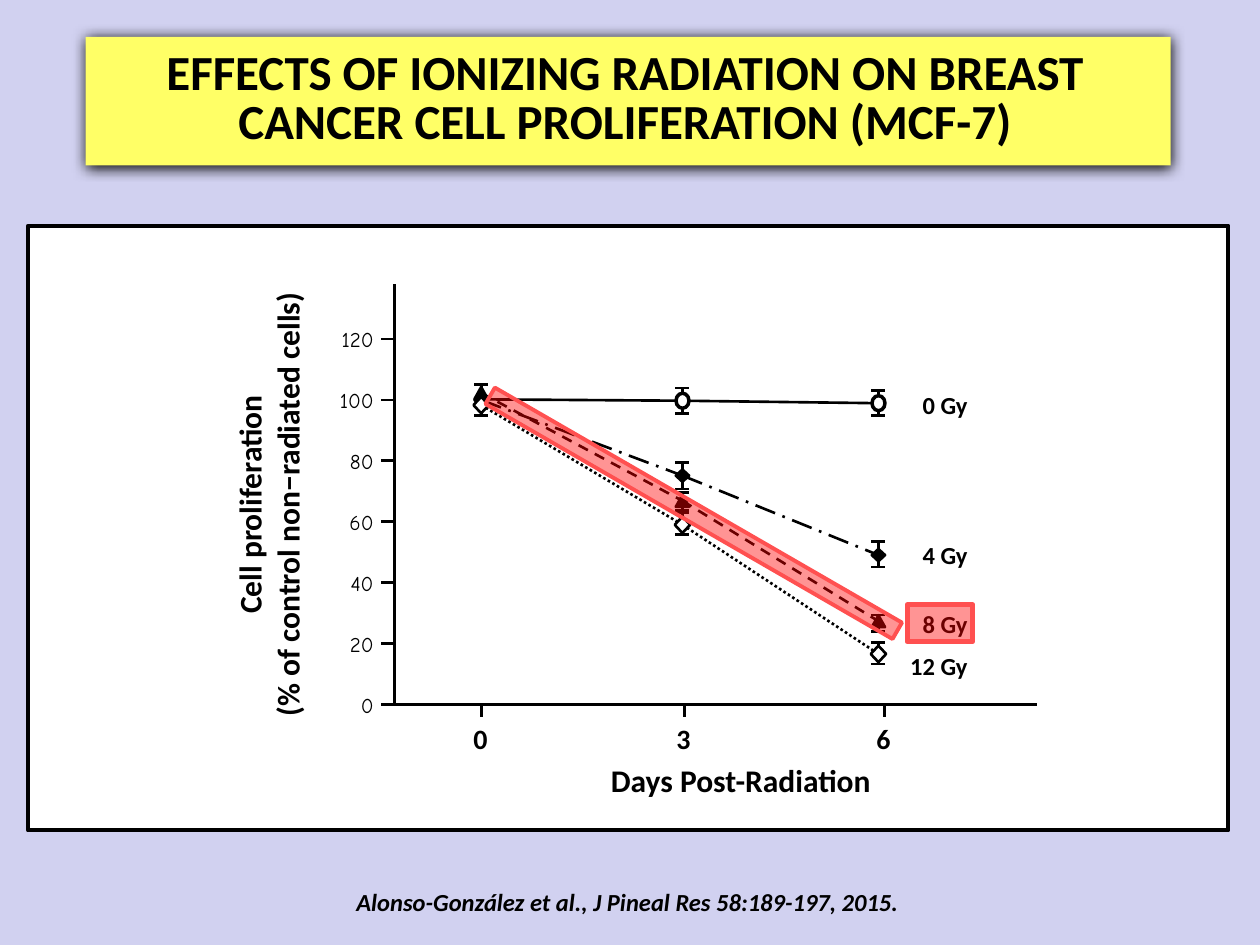
from lxml import etree
from pptx import Presentation
from pptx.dml.color import RGBColor
from pptx.enum import dml, shapes, text
from pptx.oxml import ns
from pptx.util import Pt

BLACK = RGBColor(0, 0, 0)
WHITE = RGBColor(255, 255, 255)
LILAC = RGBColor(0xD1, 0xD1, 0xF0)
YELLOW = RGBColor(0xFF, 0xFF, 0x66)
RED = RGBColor(0xFF, 0, 0)
CORAL = RGBColor(0xFF, 0x50, 0x50)
FORM = shapes.MSO_SHAPE
DASH = dml.MSO_LINE
SIDE = text.PP_ALIGN

deck = Presentation()
deck.slide_width, deck.slide_height = Pt(720), Pt(540)
slide = deck.slides.add_slide(deck.slide_layouts[5])
slide.background.fill.solid()
slide.background.fill.fore_color.rgb = LILAC


def write(words, box, size, home=None, font="Calibri", bold=True, slant=False,
          side=SIDE.CENTER, pad=True, wrap=True, turn=0, gap=None):
    place = [Pt(n) for n in box]
    home = home or slide.shapes.add_textbox(*place)
    home.left, home.top, home.width, home.height = place
    home.rotation = turn
    frame = home.text_frame
    frame.text = words
    frame.word_wrap = wrap
    frame.auto_size = text.MSO_AUTO_SIZE.NONE
    frame.vertical_anchor = text.MSO_ANCHOR.TOP
    frame.margin_left = frame.margin_right = Pt(7.2 if pad else 0)
    frame.margin_top = frame.margin_bottom = Pt(3.6 if pad else 0)
    for para in frame.paragraphs:
        para.alignment = side
        if gap:
            para.line_spacing = Pt(gap)
        face = para.font
        face.name, face.size, face.bold, face.italic = font, Pt(size), bold, slant
        face.color.rgb = BLACK


def draw(form, box, fill, edge=BLACK, wide=1.5, alpha=None, turn=0):
    shape = slide.shapes.add_shape(form, *[Pt(n) for n in box])
    shape.shadow.inherit = False
    shape.rotation = turn
    shape.fill.solid()
    shape.fill.fore_color.rgb = fill
    if edge is None:
        shape.line.fill.background()
    else:
        shape.line.color.rgb = edge
        shape.line.width = Pt(wide)
    if alpha:
        tint = shape.element.spPr.find(ns.qn("a:solidFill"))[0]
        etree.SubElement(tint, ns.qn("a:alpha"), val=str(alpha * 1000))
    return shape


draw(FORM.RECTANGLE, (16, 129, 686, 345.6), WHITE, wide=2.25)
band = draw(FORM.RECTANGLE, (49, 21, 620, 73.5), YELLOW, edge=None)
glow = etree.SubElement(band.element.spPr.find(ns.qn("a:effectLst")), ns.qn("a:outerShdw"),
                        blurRad=str(Pt(8.5)), dist=str(Pt(1)), dir="5400000", rotWithShape="0")
etree.SubElement(glow, ns.qn("a:srgbClr"), val="000000")

title = slide.shapes.title
title.element.getparent().append(title.element)
write("EFFECTS OF IONIZING RADIATION ON BREAST CANCER CELL PROLIFERATION (MCF-7)",
      (76.3, 26, 561.6, 64), 28, home=title, gap=28)

BASE, STEP, AXIS = 402.5, 34.8, 225.5
DAYS = (275, 390, 502)
lines = [(226, BASE, 592.5, BASE, None), (AXIS, BASE, AXIS, 162, None)]

for n in range(7):
    y = BASE - n * STEP
    lines.append((AXIS, y, AXIS - 7.5, y, None))
    mark = str(20 * n)
    wide = 7 * len(mark)
    write(mark, (213.5 - wide, y - 7, wide, 14.4), 12, font="Comic Neue",
          bold=False, side=SIDE.RIGHT, pad=False, wrap=False)

for day, x in (("0", 275), ("3", 391), ("6", 505.4)):
    lines.append((x, BASE, x, BASE + 7, None))
    write(day, (x - 6.5, 412.5, 12, 19.5), 16, pad=False)

doses = [
    ("4 Gy", DASH.LONG_DASH_DOT, FORM.DIAMOND, BLACK, (7.6, 7), 1.5,
     (228.6, 271.8, 317.2), (None, (264.2, 279.4), (309.6, 324)), 305.3),
    ("8 Gy", DASH.DASH, FORM.ISOSCELES_TRIANGLE, BLACK, (7.6, 6.8), 1.5,
     (224.6, 286.2, 355), ((219.6, 237.6), (281.5, 291.6), (351.4, 360.7)), 344.2),
    ("12 Gy", DASH.ROUND_DOT, FORM.DIAMOND, WHITE, (8.8, 9.4), 1.5,
     (231.5, 299.9, 373.7), (None, (293, 305.3), (367.2, 379.4)), 368.6),
    ("0 Gy", None, FORM.OVAL, WHITE, (7.4, 8.6), 2,
     (228.2, 229, 230.4), (None, (221.8, 236.2), (223.2, 237.6)), 219.6),
]
for name, dash, form, fill, size, wide, mids, bars, top in doses:
    dots = list(zip(DAYS, mids))
    for head, tail in zip(dots, dots[1:]):
        lines.append((*head, *tail, dash))
    for x, bar in zip(DAYS, bars):
        if bar:
            lines.append((x, bar[0], x, bar[1], None))
            lines += [(x - 4, y, x + 4, y, None) for y in bar]

for x, y, right, low, dash in lines:
    line = slide.shapes.add_connector(shapes.MSO_CONNECTOR.STRAIGHT,
                                      Pt(x), Pt(y), Pt(right), Pt(low))
    line.line.color.rgb = BLACK
    line.line.width = Pt(1.5)
    if dash:
        line.line.dash_style = dash
    etree.SubElement(line.element.spPr, ns.qn("a:effectLst"))

for name, dash, form, fill, size, wide, mids, bars, top in doses:
    for x, y in zip(DAYS, mids):
        if form != FORM.OVAL or x != DAYS[0]:
            draw(form, (x - size[0] / 2, y - size[1] / 2, *size), fill, wide=wide)
    write(name, (494.5, top, 65.5, 24.5), 14, side=SIDE.RIGHT)

write("Days Post-Radiation", (311, 431.3, 224.6, 29), 18)
write("Cell proliferation\n(% of control non−radiated cells)", (13, 262.8, 281, 51), 18, turn=270)
write("Alonso-González et al., J Pineal Res 58:189-197, 2015.",
      (129, 503.3, 459.4, 24.5), 14, slant=True)

draw(FORM.RECTANGLE, (391, 159, 10.8, 268.6), RED, CORAL, 2.25, alpha=42, turn=300)
draw(FORM.RECTANGLE, (518.4, 345.6, 37.5, 21), RED, CORAL, 3, alpha=42)

deck.save("out.pptx")
